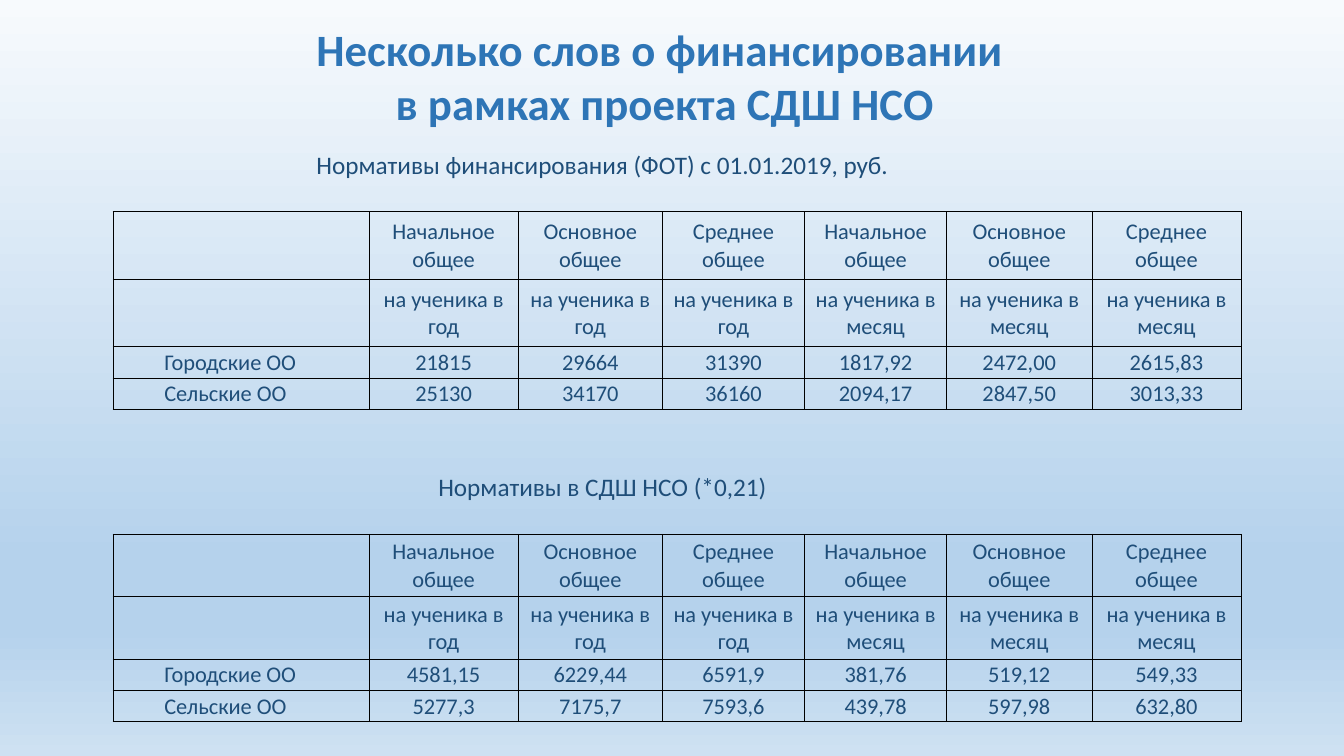
from lxml import etree
from pptx import Presentation
from pptx.dml.color import RGBColor
from pptx.enum.text import MSO_ANCHOR, PP_ALIGN
from pptx.oxml.ns import qn
from pptx.util import Inches, Pt

CENTER, LEFT = PP_ALIGN.CENTER, PP_ALIGN.LEFT
MIDDLE, BOTTOM = MSO_ANCHOR.MIDDLE, MSO_ANCHOR.BOTTOM
TITLE_BLUE = RGBColor(0x2E, 0x75, 0xB6)
TEXT_BLUE = RGBColor(0x1F, 0x4E, 0x79)
BLACK = RGBColor(0, 0, 0)
BACKGROUND_STOPS = [
    (0, RGBColor(0xF7, 0xFA, 0xFD)),
    (74, RGBColor(0xB5, 0xD2, 0xEC)),
    (83, RGBColor(0xB5, 0xD2, 0xEC)),
    (100, RGBColor(0xCE, 0xE1, 0xF2)),
]
FONT = "Calibri"
NO_STYLE = "{2D5ABB26-0587-4C30-8999-92F81FD0307C}"

COLUMN_WIDTHS = [2.54, 1.48, 1.43, 1.41, 1.41, 1.44, 1.48]
LINE_HEIGHT = 0.31
HEADER_HEIGHTS = {2: 0.67, 3: 0.67, 10: 0.62, 11: 0.62}
ROW_HEIGHTS = [HEADER_HEIGHTS.get(row, LINE_HEIGHT) for row in range(14)]
HEADERS = [
    [""] + ["Начальное общее", "Основное общее", "Среднее общее"] * 2,
    [""] + ["на ученика в год"] * 3 + ["на ученика в месяц"] * 3,
]
SECTIONS = [
    (0, BOTTOM, "Нормативы финансирования (ФОТ) с 01.01.2019, руб.", [
        ["Городские ОО", "21815", "29664", "31390", "1817,92", "2472,00", "2615,83"],
        ["Сельские ОО", "25130", "34170", "36160", "2094,17", "2847,50", "3013,33"],
    ]),
    (8, MIDDLE, "Нормативы в СДШ НСО (*0,21)", [
        ["Городские ОО", "4581,15", "6229,44", "6591,9", "381,76", "519,12", "549,33"],
        ["Сельские ОО", "5277,3", "7175,7", "7593,6", "439,78", "597,98", "632,80"],
    ]),
]


def style_paragraph(paragraph, size, color, alignment=CENTER, bold=False):
    paragraph.alignment = alignment
    paragraph.font.name = FONT
    paragraph.font.size = Pt(size)
    paragraph.font.bold = bold
    paragraph.font.color.rgb = color


def add_borders(cell):
    properties = cell._tc.get_or_add_tcPr()
    for position, side in enumerate(("a:lnL", "a:lnR", "a:lnT", "a:lnB")):
        line = etree.Element(qn(side), w=str(Pt(0.5)))
        fill = etree.SubElement(line, qn("a:solidFill"))
        etree.SubElement(fill, qn("a:srgbClr"), val=str(BLACK))
        properties.insert(position, line)


presentation = Presentation()
presentation.slide_width = Inches(13.33)
presentation.slide_height = Inches(7.5)
slide = presentation.slides.add_slide(presentation.slide_layouts[6])

background = slide.background.fill
background.gradient()
background.gradient_angle = 270
stop_list = slide.element.find(".//" + qn("a:gsLst"))
for stop in list(stop_list):
    stop_list.remove(stop)
for percent, color in BACKGROUND_STOPS:
    stop = etree.SubElement(stop_list, qn("a:gs"), pos=str(percent * 1000))
    etree.SubElement(stop, qn("a:srgbClr"), val=str(color))

title = slide.shapes.add_textbox(Inches(1.86), Inches(0.17), Inches(9.47), Inches(1.18))
title.text_frame.word_wrap = True
title.text_frame.text = "Несколько слов о финансировании \nв рамках проекта СДШ НСО"
for paragraph in title.text_frame.paragraphs:
    style_paragraph(paragraph, 32, TITLE_BLUE, bold=True)

table_frame = slide.shapes.add_table(
    len(ROW_HEIGHTS), len(COLUMN_WIDTHS), Inches(1.12), Inches(1.48),
    Inches(sum(COLUMN_WIDTHS)), Inches(sum(ROW_HEIGHTS)))
table = table_frame.table
table.first_row = False
table.horz_banding = False
table_frame.element.find(".//" + qn("a:tableStyleId")).text = NO_STYLE
for column, width in zip(table.columns, COLUMN_WIDTHS):
    column.width = Inches(width)
for row, height in zip(table.rows, ROW_HEIGHTS):
    row.height = Inches(height)

for cell in table.iter_cells():
    cell.margin_left = cell.margin_right = cell.margin_top = Inches(0.01)
    cell.margin_bottom = 0
    cell.vertical_anchor = MIDDLE
    cell.fill.background()

for caption_row, anchor, caption, values in SECTIONS:
    caption_cell = table.cell(caption_row, 0)
    caption_cell.merge(table.cell(caption_row, 5))
    caption_cell.text = caption
    caption_cell.vertical_anchor = anchor
    style_paragraph(caption_cell.text_frame.paragraphs[0], 18, TEXT_BLUE)

    for row_index, texts in enumerate(HEADERS + values, caption_row + 2):
        for column_index, text in enumerate(texts):
            cell = table.cell(row_index, column_index)
            add_borders(cell)
            if not text:
                continue
            cell.text = text
            paragraph = cell.text_frame.paragraphs[0]
            if column_index == 0:
                style_paragraph(paragraph, 16, TEXT_BLUE, LEFT)
                paragraph.level = 1
                paragraph._p.get_or_add_pPr().set("marL", str(Inches(0.5)))
            else:
                style_paragraph(paragraph, 16, TEXT_BLUE)

presentation.save("out.pptx")
